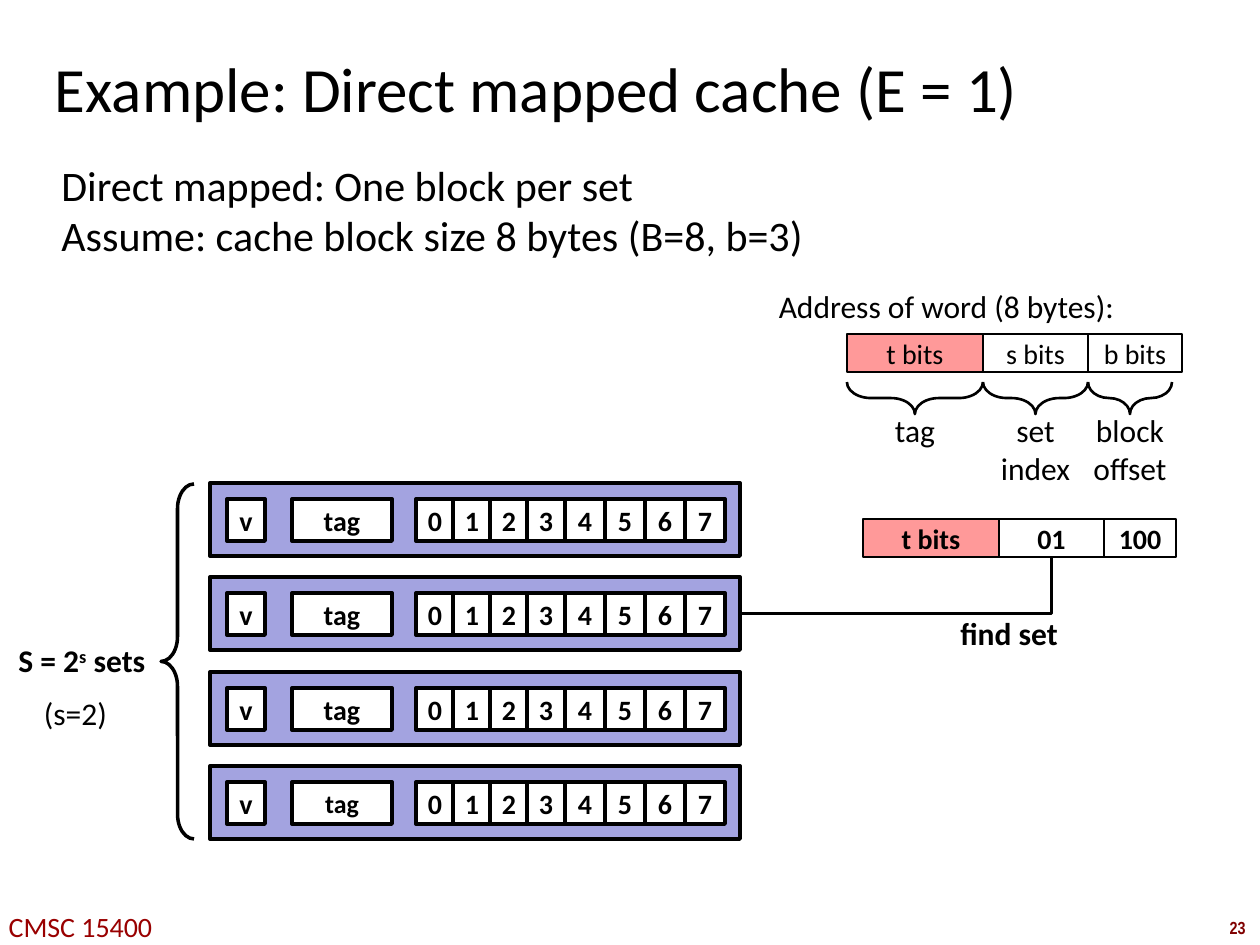
from itertools import accumulate

from pptx import Presentation
from pptx.dml.color import RGBColor
from pptx.enum.shapes import MSO_CONNECTOR as Connector, MSO_SHAPE as Shape
from pptx.enum.text import MSO_ANCHOR as Anchor, MSO_AUTO_SIZE as AutoSize, PP_ALIGN as Align
from pptx.oxml.ns import qn
from pptx.oxml.xmlchemy import OxmlElement
from pptx.util import Emu, Pt

PX_PER_INCH = 126
COLORS = {
    "ink": "000000",
    "white": "FFFFFF",
    "tag": "FF9999",
    "cache_set": "A3A3E0",
    "course": "990000",
    "number": "800000",
}


def px(length):
    return Emu(round(length * 914400 / PX_PER_INCH))


def color(name):
    return RGBColor.from_string(COLORS[name])


def add_run(paragraph, text, size, bold=False, ink="ink", font="Calibri"):
    run = paragraph.add_run()
    run.text = text
    run.font.name = font
    run.font.size = Pt(size)
    run.font.bold = bold
    run.font.color.rgb = color(ink)
    return run


def add_label(slide, box, lines, size=18, align=Align.CENTER, **style):
    """Add an unwrapped text box with one paragraph per line."""
    frame = slide.shapes.add_textbox(*map(px, box)).text_frame
    frame.word_wrap = False
    frame.auto_size = AutoSize.SHAPE_TO_FIT_TEXT
    for index, line in enumerate(lines):
        paragraph = frame.add_paragraph() if index else frame.paragraphs[0]
        paragraph.alignment = align
        if line:
            add_run(paragraph, line, size, **style)
    return frame


def add_title(slide, text):
    frame = slide.shapes.add_textbox(px(50), px(35), px(1046), px(105)).text_frame
    frame.word_wrap = True
    frame.vertical_anchor = Anchor.MIDDLE
    frame.margin_left = frame.margin_right = px(5)
    frame.margin_top = frame.margin_bottom = px(5)
    add_run(frame.paragraphs[0], text, 36)


def add_box(slide, box, fill, line_width, text="", size=16, bold=True, wrap=False):
    shape = slide.shapes.add_shape(Shape.RECTANGLE, *map(px, box))
    shape.shadow.inherit = False
    shape.fill.solid()
    shape.fill.fore_color.rgb = color(fill)
    shape.line.color.rgb = color("ink")
    shape.line.width = Pt(line_width)
    if text:
        frame = shape.text_frame
        frame.word_wrap = wrap
        frame.vertical_anchor = Anchor.MIDDLE
        frame.paragraphs[0].alignment = Align.CENTER
        add_run(frame.paragraphs[0], text, size, bold)
    return shape


def add_brace(slide, box, line_width, rotation=0):
    brace = slide.shapes.add_shape(Shape.LEFT_BRACE, *map(px, box))
    brace.shadow.inherit = False
    brace.adjustments[0] = 0.75
    brace.rotation = rotation
    brace.fill.background()
    brace.line.color.rgb = color("ink")
    brace.line.width = Pt(line_width)


def add_brace_below(slide, left, top, span, depth=32):
    """Add a brace that opens upwards and spans a width."""
    box = (left + (span - depth) / 2, top + (depth - span) / 2, depth, span)
    add_brace(slide, box, 1.5, rotation=270)


def add_address(slide, left, top, widths, texts, bold):
    """Add the tag, set index and block offset fields side by side."""
    lefts = accumulate(widths[:-1], initial=left)
    fills = ("tag", "white", "white")
    return [
        add_box(slide, (x, top, width, 38), fill, 1, text, bold=bold, wrap=True)
        for x, width, fill, text in zip(lefts, widths, fills, texts)
    ]


def add_cache_set(slide, top, tag_size):
    frame = add_box(slide, (210, top, 530, 73), "cache_set", 2.25)
    cells = [(227, 38, "v", 16), (292, 100, "tag", tag_size)]
    cells += [(416 + 37 * byte, 38, str(byte), 16) for byte in range(4)]
    cells += [(565 + 40 * (byte - 4), 40, str(byte), 16) for byte in range(4, 8)]
    for left, width, text, size in cells:
        add_box(slide, (left, top + 16, width, 42), "white", 2.25, text, size)
    return frame


def add_corner_connector(slide, source, target):
    """Go down from the source's bottom, then left to the target's right side."""
    connector = slide.shapes.add_connector(Connector.ELBOW, 0, 0, 0, 0)
    connector.begin_connect(source, 2)
    connector.end_connect(target, 3)
    start_x, start_y = source.left + source.width // 2, source.top + source.height
    end_x, end_y = target.left + target.width, target.top + target.height // 2
    across, down = start_x - end_x, end_y - start_y
    # The frame is turned by 90 degrees, so its sides swap about the centre.
    connector.width, connector.height = down, across
    connector.left = (start_x + end_x - down) // 2
    connector.top = (start_y + end_y - across) // 2
    properties = connector._element.spPr
    transform = properties.find(qn("a:xfrm"))
    for flip in ("flipH", "flipV"):
        transform.attrib.pop(flip, None)
    transform.set("rot", "5400000")
    properties.find(qn("a:prstGeom")).set("prst", "bentConnector2")
    connector.line.color.rgb = color("ink")
    connector.line.width = Pt(2)
    properties.append(OxmlElement("a:effectLst"))


def add_set_count(slide):
    paragraph = add_label(slide, (6, 635, 155, 50), [""], align=Align.LEFT).paragraphs[0]
    add_run(paragraph, "S = 2", 18, bold=True)
    exponent = add_run(paragraph, "s", 18, bold=True)
    exponent._r.get_or_add_rPr().set("baseline", "30000")
    add_run(paragraph, " sets", 18, bold=True)
    add_label(slide, (31, 688, 89, 50), ["(s=2)"])


def add_field_names(slide):
    """Name each address field below a brace, centred on the brace."""
    fields = (
        (847, 136, 67, ["tag"]),
        (983, 105, 97, ["set", "index"]),
        (1088, 84, 102, ["block", "offset"]),
    )
    for left, span, width, lines in fields:
        add_brace_below(slide, left, 382, span)
        height = 50 + 39 * (len(lines) - 1)
        add_label(slide, (left + (span - width) / 2, 405, width, height), lines)


def main():
    presentation = Presentation()
    presentation.slide_width, presentation.slide_height = px(1260), px(945)
    slide = presentation.slides.add_slide(presentation.slide_layouts[6])

    add_title(slide, "Example: Direct mapped cache (E = 1)")
    add_label(slide, (49, 153, 774, 115),
              ["Direct mapped: One block per set",
               "Assume: cache block size 8 bytes (B=8, b=3)"],
              size=24, align=Align.LEFT)

    add_brace(slide, (161, 484, 33, 355), 2)
    add_set_count(slide)
    cache_sets = [
        add_cache_set(slide, 483 + 189 * index // 2, tag_size)
        for index, tag_size in enumerate((16, 16, 16, 14.8))
    ]

    add_label(slide, (764, 281, 365, 50), ["Address of word (8 bytes):"])
    add_address(slide, 847, 334, (136, 105, 94), ("t bits", "s bits", "b bits"), False)
    add_field_names(slide)

    example = add_address(slide, 863, 519, (136, 105, 72), ("t bits", "01", "100"), True)
    add_corner_connector(slide, example[1], cache_sets[1])
    add_label(slide, (948, 608, 123, 50), ["find set"], align=Align.LEFT, bold=True)

    add_label(slide, (-4, 903, 169, 47), ["CMSC 15400"], size=16, ink="course")
    add_label(slide, (1216, 911, 43, 34), ["23"], size=10, bold=True,
              ink="number", font="Arial Narrow")

    presentation.save("out.pptx")


if __name__ == "__main__":
    main()
